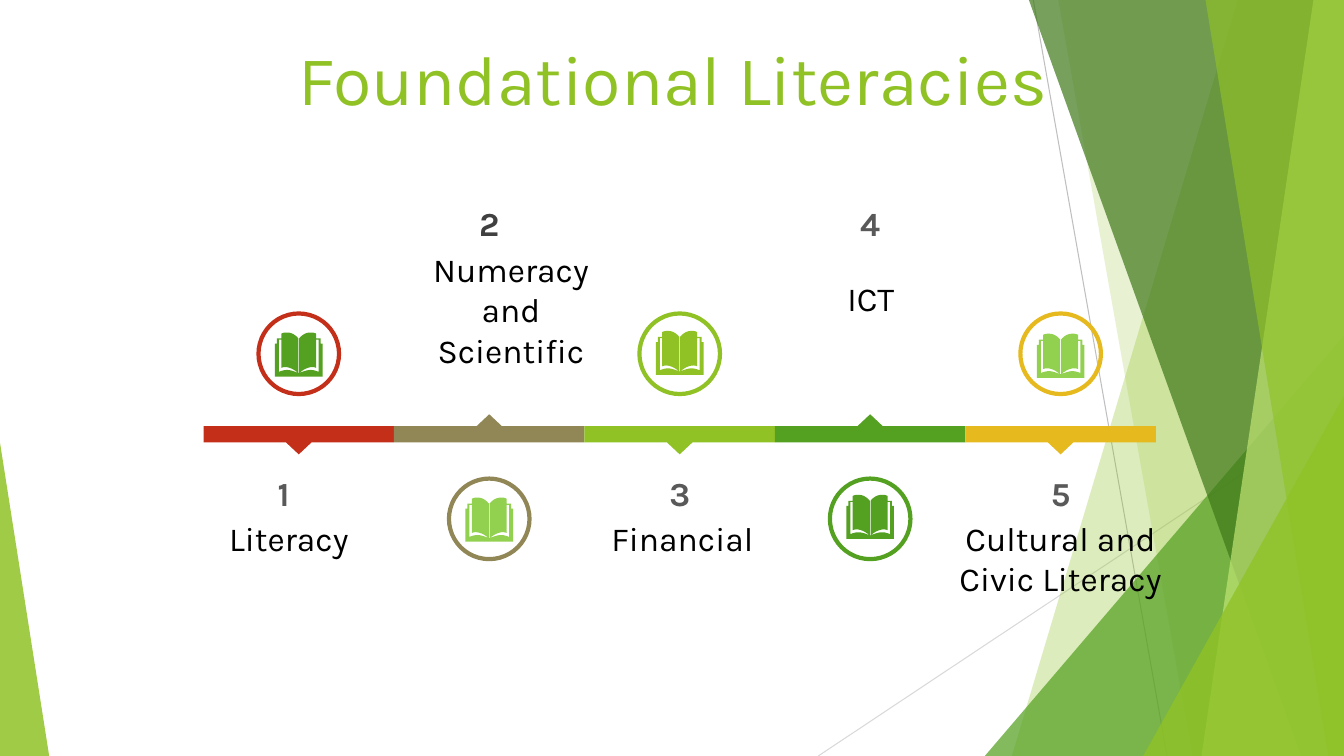
from collections import namedtuple

from lxml.etree import SubElement
from pptx import Presentation
from pptx.dml.color import RGBColor
from pptx.enum.shapes import MSO_CONNECTOR, MSO_SHAPE
from pptx.enum.text import MSO_ANCHOR, MSO_AUTO_SIZE, PP_ALIGN
from pptx.oxml.ns import qn
from pptx.util import Cm, Pt

BLACK = RGBColor(0x00, 0x00, 0x00)
CHARCOAL = RGBColor(0x40, 0x40, 0x40)
GREY = RGBColor(0x59, 0x59, 0x59)
SILVER = RGBColor(0xBF, 0xBF, 0xBF)
PALE_GREY = RGBColor(0xD9, 0xD9, 0xD9)
LIME = RGBColor(0x90, 0xC2, 0x26)
PALE_LIME = RGBColor(0xC0, 0xE4, 0x74)
LEAF = RGBColor(0x54, 0xA0, 0x21)
FOREST = RGBColor(0x3F, 0x78, 0x19)
LIGHT_GREEN = RGBColor(0x92, 0xD0, 0x50)
RED = RGBColor(0xC4, 0x2F, 0x1A)
OLIVE = RGBColor(0x91, 0x86, 0x55)
GOLD = RGBColor(0xE6, 0xB9, 0x1E)

FONT = "Karla"
WIDTH, HEIGHT = 33.87, 19.05
STEP_LEFT, STEP_WIDTH = 5.13, 4.8
BAR_TOP, BAR_BOTTOM = 10.74, 11.15
TIP_DEPTH, TIP_HALF = 0.3, 0.32
RING_SIZE = 2.03

Step = namedtuple("Step", "colour book_colour book_top number_left number_colour caption area")
STEPS = [
    Step(RED, LEAF, 8.38, 5.13, GREY, "Literacy", (3.51, 12.93, 7.54, 1.27)),
    Step(OLIVE, LIGHT_GREEN, 12.54, 10.31, CHARCOAL, "Numeracy and Scientific",
         (10.31, 6.15, 5.13, 3.33)),
    Step(LIME, LIME, 8.34, 15.11, GREY, "Financial", (14.53, 12.93, 5.33, 1.27)),
    Step(LEAF, LEAF, 12.47, 19.91, GREY, "ICT", (19.28, 6.88, 5.33, 1.27)),
    Step(GOLD, LIGHT_GREEN, 8.41, 24.71, GREY, "Cultural and Civic Literacy",
         (23.5, 12.93, 6.45, 2.31)),
]


def paint(shape, colour, opacity=100):
    """Fill a shape with one colour and drop its outline and shadow."""
    shape.shadow.inherit = False
    shape.line.fill.background()
    shape.fill.solid()
    shape.fill.fore_color.rgb = colour
    if opacity < 100:
        tint = shape.fill._xPr.find(".//" + qn("a:srgbClr"))
        SubElement(tint, qn("a:alpha"), val=str(opacity * 1000))


def add_outline(page, points, colour, opacity=100):
    """Draw a filled polygon through points given in centimetres."""
    corners = [(Cm(x), Cm(y)) for x, y in points]
    builder = page.shapes.build_freeform(*corners[0])
    builder.add_line_segments(corners[1:], close=True)
    paint(builder.convert_to_shape(), colour, opacity)


def add_triangle(page, area, apex, colour, opacity):
    """Draw a translucent triangle with its apex at a share of its width."""
    triangle = page.shapes.add_shape(MSO_SHAPE.ISOSCELES_TRIANGLE, *map(Cm, area))
    triangle.adjustments[0] = apex
    paint(triangle, colour, opacity)


def add_line(page, ends, colour):
    """Draw a thin straight line."""
    line = page.shapes.add_connector(MSO_CONNECTOR.STRAIGHT, *map(Cm, ends))
    line.line.color.rgb = colour
    line.line.width = Pt(0.75)
    SubElement(line._element.spPr, qn("a:effectLst"))


def add_text(page, text, area, size=24, colour=BLACK, bold=False, before=0,
             anchor=MSO_ANCHOR.TOP, fit=MSO_AUTO_SIZE.SHAPE_TO_FIT_TEXT):
    """Place one centred paragraph of text."""
    box = page.shapes.add_textbox(*map(Cm, area))
    frame = box.text_frame
    frame.word_wrap = True
    frame.auto_size = fit
    frame.vertical_anchor = anchor
    para = frame.paragraphs[0]
    para.alignment = PP_ALIGN.CENTER
    para.space_before = Pt(before)
    span = para.add_run()
    span.text = text
    span.font.name = FONT
    span.font.size = Pt(size)
    span.font.bold = bold
    span.font.color.rgb = colour


def curve(start, first, second, end, count=8):
    """Return points along a cubic curve."""
    points = []
    for index in range(count + 1):
        t = index / count
        weights = ((1 - t) ** 3, 3 * t * (1 - t) ** 2, 3 * t ** 2 * (1 - t), t ** 3)
        points.append(tuple(sum(w * p[axis] for w, p in zip(weights, (start, first, second, end)))
                            for axis in (0, 1)))
    return points


def add_book(page, centre, top, colour):
    """Draw an open book from one half and its mirror."""
    half = [
        *curve((0.01, 1.02), (0.22, 0.94), (0.3, 0.91), (0.5, 0.99)),
        (0.5, 0.18), (0.44, 0.18),
        *curve((0.44, 0.89), (0.32, 0.84), (0.17, 0.89), (0.01, 1.02)),
        *curve((0.01, 0.15), (0.09, 0.05), (0.19, 0), (0.29, 0)),
        *curve((0.29, 0), (0.34, 0), (0.39, 0), (0.44, 0.03)),
        (0.44, 0.15), (0.55, 0.15), (0.55, 0.28), (0.6, 0.28), (0.6, 1.11),
    ]
    whole = half + [(-x, y) for x, y in reversed(half)]
    add_outline(page, [(centre + x, top + y) for x, y in whole], colour)


def add_ring(page, centre, top, colour):
    """Draw an unfilled circle."""
    ring = page.shapes.add_shape(MSO_SHAPE.OVAL, Cm(centre - RING_SIZE / 2), Cm(top),
                                 Cm(RING_SIZE), Cm(RING_SIZE))
    ring.shadow.inherit = False
    ring.fill.background()
    ring.line.color.rgb = colour
    ring.line.width = Pt(3)


def add_bar(page, left, points_up, colour):
    """Draw one timeline segment with a tip pointing up or down."""
    base, edge, tip = ((BAR_BOTTOM, BAR_TOP, BAR_TOP - TIP_DEPTH) if points_up
                       else (BAR_TOP, BAR_BOTTOM, BAR_BOTTOM + TIP_DEPTH))
    right, middle = left + STEP_WIDTH, left + STEP_WIDTH / 2
    add_outline(page, [(left, base), (right, base), (right, edge), (middle + TIP_HALF, edge),
                       (middle, tip), (middle - TIP_HALF, edge), (left, edge)], colour)


def add_band(page, top_x, bottom_x, colour, opacity):
    """Draw a full-height facet that reaches the right edge."""
    add_outline(page, [(top_x, 0), (WIDTH, 0), (WIDTH, HEIGHT), (bottom_x, HEIGHT)],
                colour, opacity)


def add_facets(page):
    """Draw the green facets along both sides."""
    add_line(page, (26.04, 0, 29.41, HEIGHT), SILVER)
    add_line(page, (WIDTH, 10.24, 20.62, HEIGHT), PALE_GREY)
    add_band(page, 31.19, 25.5, LIME, 30)
    add_band(page, 26.67, 30.05, LIME, 20)
    add_triangle(page, (24.82, 8.46, 9.05, 10.59), 1, LEAF, 72)
    add_band(page, 25.93, 32.79, FOREST, 70)
    add_band(page, 33.1, 30.28, PALE_LIME, 70)
    add_band(page, 30.38, 33.48, LIME, 65)
    add_triangle(page, (28.81, 9.98, 5.06, 9.07), 1, LIME, 80)
    add_triangle(page, (0, 11.15, 1.24, 7.9), 0, LIME, 85)


def add_step(page, index, step):
    """Draw one literacy with its bar, ring, book, number and caption."""
    left = STEP_LEFT + index * STEP_WIDTH
    centre = left + STEP_WIDTH / 2
    points_up = index % 2 == 1
    add_bar(page, left, points_up, step.colour)
    add_ring(page, centre, 12.06 if points_up else 7.9, step.colour)
    add_book(page, centre, step.book_top, step.book_colour)
    add_text(page, str(index + 1), (step.number_left, 5 if points_up else 11.79, 4.04, 1.27),
             colour=step.number_colour, bold=True)
    add_text(page, step.caption, step.area)


def main():
    """Build the slide and save it."""
    deck = Presentation()
    deck.slide_width, deck.slide_height = Cm(WIDTH), Cm(HEIGHT)
    page = deck.slides.add_slide(deck.slide_layouts[6])
    add_facets(page)
    add_text(page, "Foundational Literacies", (0.89, 0.94, 32.16, 2.01), size=50, colour=LIME,
             before=10, anchor=MSO_ANCHOR.MIDDLE, fit=MSO_AUTO_SIZE.NONE)
    for index, step in enumerate(STEPS):
        add_step(page, index, step)
    deck.save("out.pptx")


if __name__ == "__main__":
    main()
